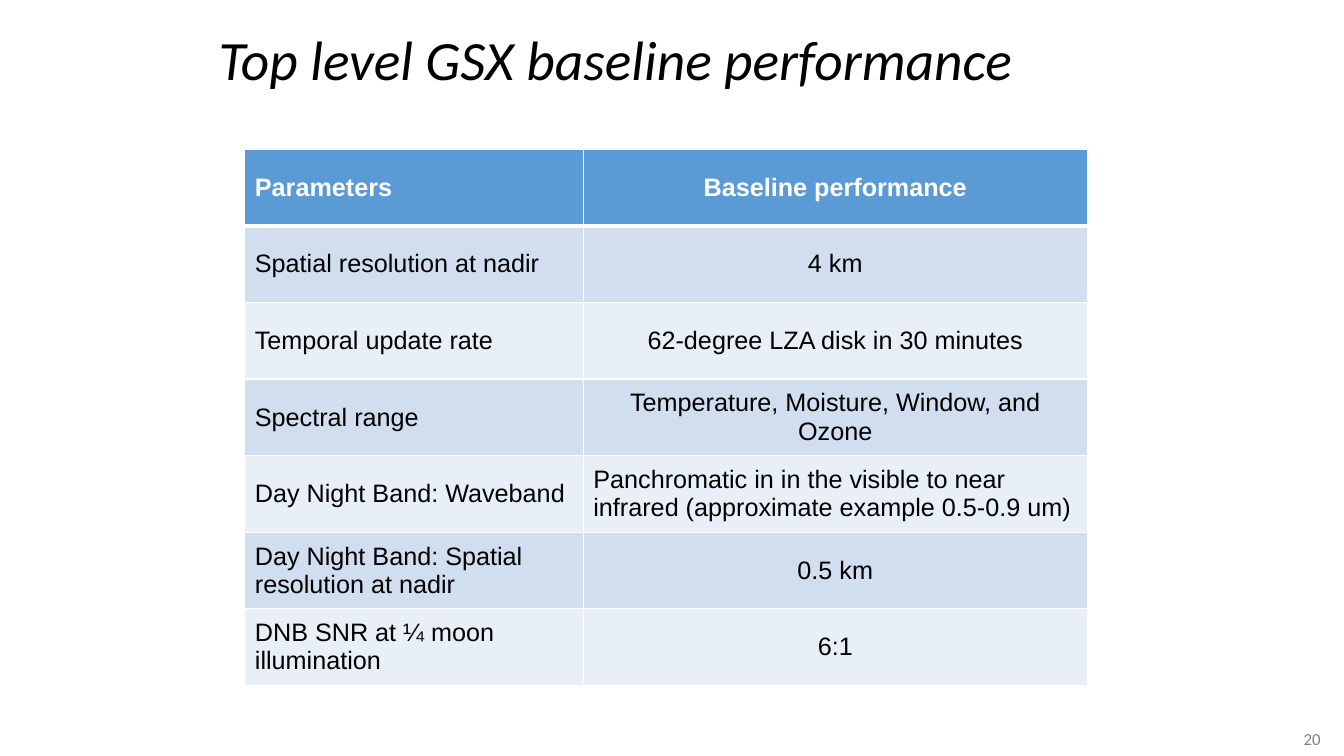
import lxml.etree
import pptx
import pptx.dml.color
import pptx.enum.text
import pptx.oxml.ns
import pptx.util

Cm = pptx.util.Cm
Pt = pptx.util.Pt
ALIGN = pptx.enum.text.PP_ALIGN
MIDDLE = pptx.enum.text.MSO_ANCHOR.MIDDLE

COLOURS = {
    "text": "000000",
    "header": "5B9BD5",
    "odd": "D0DEEF",
    "even": "E9EFF7",
    "white": "FFFFFF",
    "number": "7F7F7F",
}
FORMATS = {
    "title": {"name": "Calibri", "size": Pt(39.6), "italic": True},
    "number": {"name": "Calibri", "size": Pt(12)},
    "header": {"name": "Arial", "size": Pt(18), "bold": True},
    "body": {"name": "Arial", "size": Pt(18), "bold": False},
}
PERFORMANCE = [
    ("Parameters", "Baseline performance"),
    ("Spatial resolution at nadir", "4 km"),
    ("Temporal update rate", "62-degree LZA disk in 30 minutes"),
    ("Spectral range", "Temperature, Moisture, Window, and Ozone"),
    ("Day Night Band: Waveband",
     "Panchromatic in in the visible to near infrared (approximate example 0.5-0.9 um)"),
    ("Day Night Band: Spatial resolution at nadir", "0.5 km"),
    ("DNB SNR at ¼ moon illumination", "6:1"),
]
LEFT_ALIGNED_VALUE_ROW = 4


def colour(name):
    return pptx.dml.color.RGBColor.from_string(COLOURS[name])


def write_paragraph(paragraph, text, style, colour_name, alignment):
    paragraph.text = text
    paragraph.alignment = alignment
    font = paragraph.runs[0].font
    for attribute, value in FORMATS[style].items():
        setattr(font, attribute, value)
    font.color.rgb = colour(colour_name)


def add_text(slide, box, text, style, colour_name, alignment, line_spacing):
    frame = slide.shapes.add_textbox(*box).text_frame
    frame.word_wrap = True
    frame.vertical_anchor = MIDDLE
    paragraph = frame.paragraphs[0]
    paragraph.line_spacing = line_spacing
    write_paragraph(paragraph, text, style, colour_name, alignment)


def set_borders(cell, widths):
    properties = cell._tc.get_or_add_tcPr()
    for index, (side, width) in enumerate(widths.items()):
        line = lxml.etree.Element(pptx.oxml.ns.qn(f"a:ln{side}"), w=str(Pt(width)))
        fill = lxml.etree.SubElement(line, pptx.oxml.ns.qn("a:solidFill"))
        lxml.etree.SubElement(fill, pptx.oxml.ns.qn("a:srgbClr"), val=COLOURS["white"])
        properties.insert(index, line)


def add_performance_table(slide, box):
    left, top, width, height = box
    table = slide.shapes.add_table(len(PERFORMANCE), 2, left, top, width, height).table
    table.columns[0].width = Cm(8.53)
    table.columns[1].width = width - Cm(8.53)
    for row_index, texts in enumerate(PERFORMANCE):
        is_header = row_index == 0
        band = "header" if is_header else ("even", "odd")[row_index % 2]
        for column_index, text in enumerate(texts):
            cell = table.cell(row_index, column_index)
            cell.vertical_anchor = MIDDLE
            cell.fill.solid()
            cell.fill.fore_color.rgb = colour(band)
            centred = column_index == 1 and row_index != LEFT_ALIGNED_VALUE_ROW
            write_paragraph(
                cell.text_frame.paragraphs[0], text,
                "header" if is_header else "body",
                "white" if is_header else "text",
                ALIGN.CENTER if centred else ALIGN.LEFT)
            set_borders(cell, {"L": 1, "R": 1,
                               "T": 3 if row_index == 1 else 1,
                               "B": 3 if is_header else 1})


def build_performance_slide(presentation):
    slide = presentation.slides.add_slide(presentation.slide_layouts[6])
    add_text(slide, (Cm(5.26), Cm(0.76), Cm(23.06), Cm(1.65)),
             "Top level GSX baseline performance", "title", "text", ALIGN.LEFT, 0.9)
    add_performance_table(slide, (Cm(6.17), Cm(3.76), Cm(21.23), Cm(13.51)))
    add_text(slide, (Cm(25.91), Cm(18.21), Cm(7.62), Cm(0.79)),
             "20", "number", "number", ALIGN.RIGHT, 1.0)


def main():
    presentation = pptx.Presentation()
    presentation.slide_width = Cm(33.87)
    presentation.slide_height = Cm(19.05)
    build_performance_slide(presentation)
    presentation.save("out.pptx")


if __name__ == "__main__":
    main()
